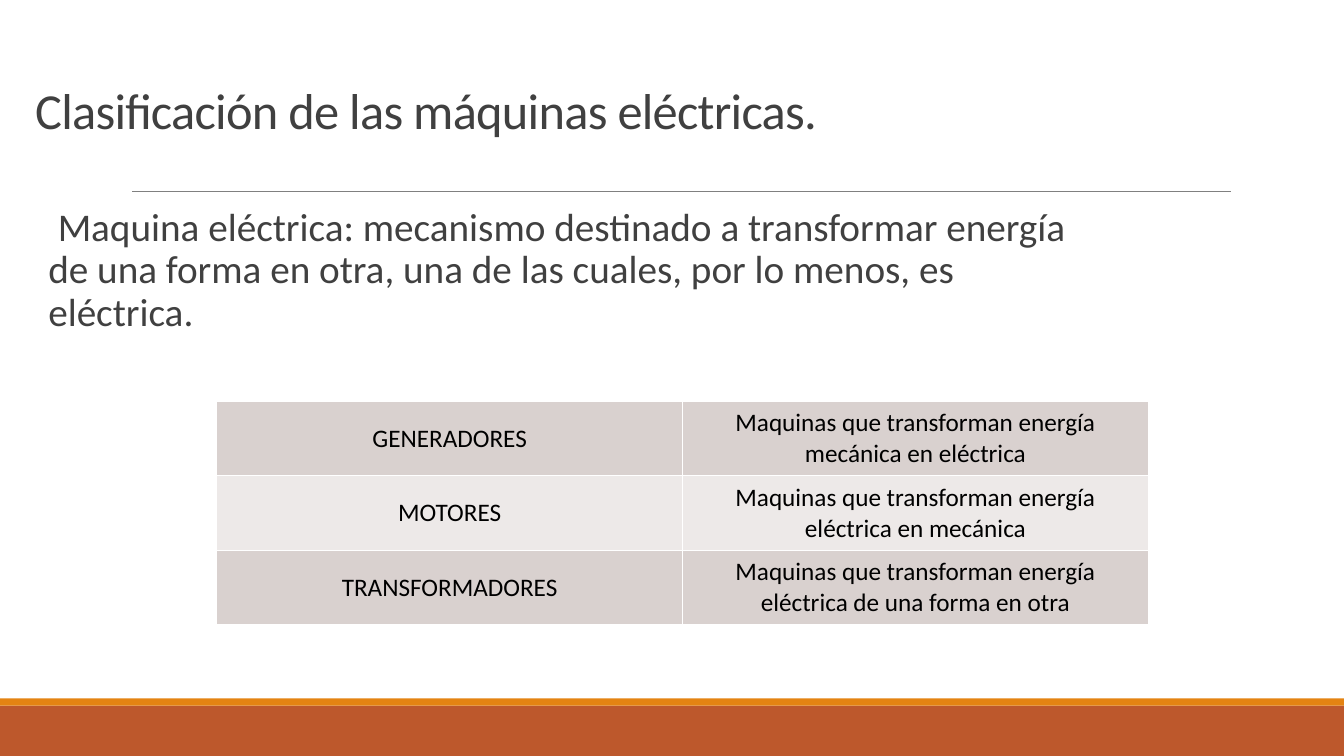
from lxml import etree
from pptx import Presentation
from pptx.dml.color import RGBColor
from pptx.enum.shapes import MSO_CONNECTOR, MSO_SHAPE
from pptx.enum.text import MSO_ANCHOR, PP_ALIGN
from pptx.oxml.ns import qn
from pptx.util import Inches, Pt

RECTANGLE = MSO_SHAPE.RECTANGLE
STRAIGHT = MSO_CONNECTOR.STRAIGHT
TOP, MIDDLE, BOTTOM = MSO_ANCHOR.TOP, MSO_ANCHOR.MIDDLE, MSO_ANCHOR.BOTTOM
CENTER = PP_ALIGN.CENTER

HEADING = "Clasificación de las máquinas eléctricas."
DEFINITION = (
    "Maquina eléctrica: mecanismo destinado a transformar energía de una "
    "forma en otra, una de las cuales, por lo menos, es eléctrica."
)
MACHINES = [
    ("GENERADORES", "Maquinas que transforman energía mecánica en eléctrica"),
    ("MOTORES", "Maquinas que transforman energía eléctrica en mecánica"),
    ("TRANSFORMADORES", "Maquinas que transforman energía eléctrica de una forma en otra"),
]

FONT = "Calibri"
TEXT_COLOR = "404040"
ORANGE = "E48312"
ROW_FILLS = ["D9D1CF", "EDE9E8"]
FOOTER_BANDS = [(7, 0.5, "BD582C"), (6.93, 0.07, ORANGE)]
SLIDE_WIDTH, SLIDE_HEIGHT = 13.33, 7.5
COLUMN_WIDTH, ROW_HEIGHT = 4.62, 0.74


def color(hex_code):
    return RGBColor.from_string(hex_code)


def set_font(paragraph, size, hex_code):
    paragraph.font.name = FONT
    paragraph.font.size = Pt(size)
    paragraph.font.color.rgb = color(hex_code)


def add_text(slide, text, box, size, anchor, line_spacing):
    frame = slide.shapes.add_textbox(*map(Inches, box)).text_frame
    frame.word_wrap = True
    frame.vertical_anchor = anchor
    paragraph = frame.paragraphs[0]
    paragraph.text = text
    paragraph.line_spacing = line_spacing
    set_font(paragraph, size, TEXT_COLOR)
    return frame, paragraph


def add_blank_bullet(paragraph):
    properties = paragraph._p.get_or_add_pPr()
    properties.set("marL", str(Inches(0.1)))
    properties.set("indent", str(Inches(-0.1)))
    bullet_color = etree.Element(qn("a:buClr"))
    etree.SubElement(bullet_color, qn("a:srgbClr"), val=ORANGE)
    bullet = etree.Element(qn("a:buChar"), char=" ")
    defaults = properties.find(qn("a:defRPr"))
    for element in (bullet_color, bullet):
        if defaults is None:
            properties.append(element)
        else:
            defaults.addprevious(element)


def add_cell_borders(cell):
    properties = cell._tc.get_or_add_tcPr()
    for position, side in enumerate(("a:lnL", "a:lnR", "a:lnT", "a:lnB")):
        border = etree.Element(qn(side), w=str(Pt(1)))
        fill = etree.SubElement(border, qn("a:solidFill"))
        etree.SubElement(fill, qn("a:srgbClr"), val="FFFFFF")
        properties.insert(position, border)


def main():
    presentation = Presentation()
    presentation.slide_width = Inches(SLIDE_WIDTH)
    presentation.slide_height = Inches(SLIDE_HEIGHT)
    slide = presentation.slides.add_slide(presentation.slide_layouts[6])

    for top, height, fill in FOOTER_BANDS:
        band = slide.shapes.add_shape(
            RECTANGLE, 0, Inches(top), Inches(SLIDE_WIDTH), Inches(height))
        band.shadow.inherit = False
        band.fill.solid()
        band.fill.fore_color.rgb = color(fill)
        band.line.fill.background()

    divider = slide.shapes.add_connector(
        STRAIGHT, Inches(1.31), Inches(1.9), Inches(12.21), Inches(1.9))
    divider.line.color.rgb = color("808080")
    divider.line.width = Pt(0.5)
    etree.SubElement(divider._element.spPr, qn("a:effectLst"))

    _, heading = add_text(slide, HEADING, (0.25, 0.76, 10.18, 0.68), 36, BOTTOM, 0.85)
    heading.runs[0]._r.get_or_add_rPr().set("spc", "-50")

    definition_frame, definition = add_text(
        slide, DEFINITION, (0.38, 2.01, 10.5, 1.4), 28, TOP, 0.9)
    definition_frame.margin_left = definition_frame.margin_right = 0
    definition.space_before = Pt(12)
    definition.space_after = Pt(2)
    add_blank_bullet(definition)

    column_count = len(MACHINES[0])
    machines = slide.shapes.add_table(
        len(MACHINES), column_count, Inches(2.15), Inches(3.98),
        Inches(COLUMN_WIDTH * column_count), Inches(ROW_HEIGHT * len(MACHINES))).table
    for row, entry in enumerate(MACHINES):
        for column, text in enumerate(entry):
            cell = machines.cell(row, column)
            cell.text = text
            cell.vertical_anchor = MIDDLE
            cell.fill.solid()
            cell.fill.fore_color.rgb = color(ROW_FILLS[row % len(ROW_FILLS)])
            paragraph = cell.text_frame.paragraphs[0]
            paragraph.alignment = CENTER
            set_font(paragraph, 18, "000000")
            add_cell_borders(cell)

    presentation.save("out.pptx")


if __name__ == "__main__":
    main()
